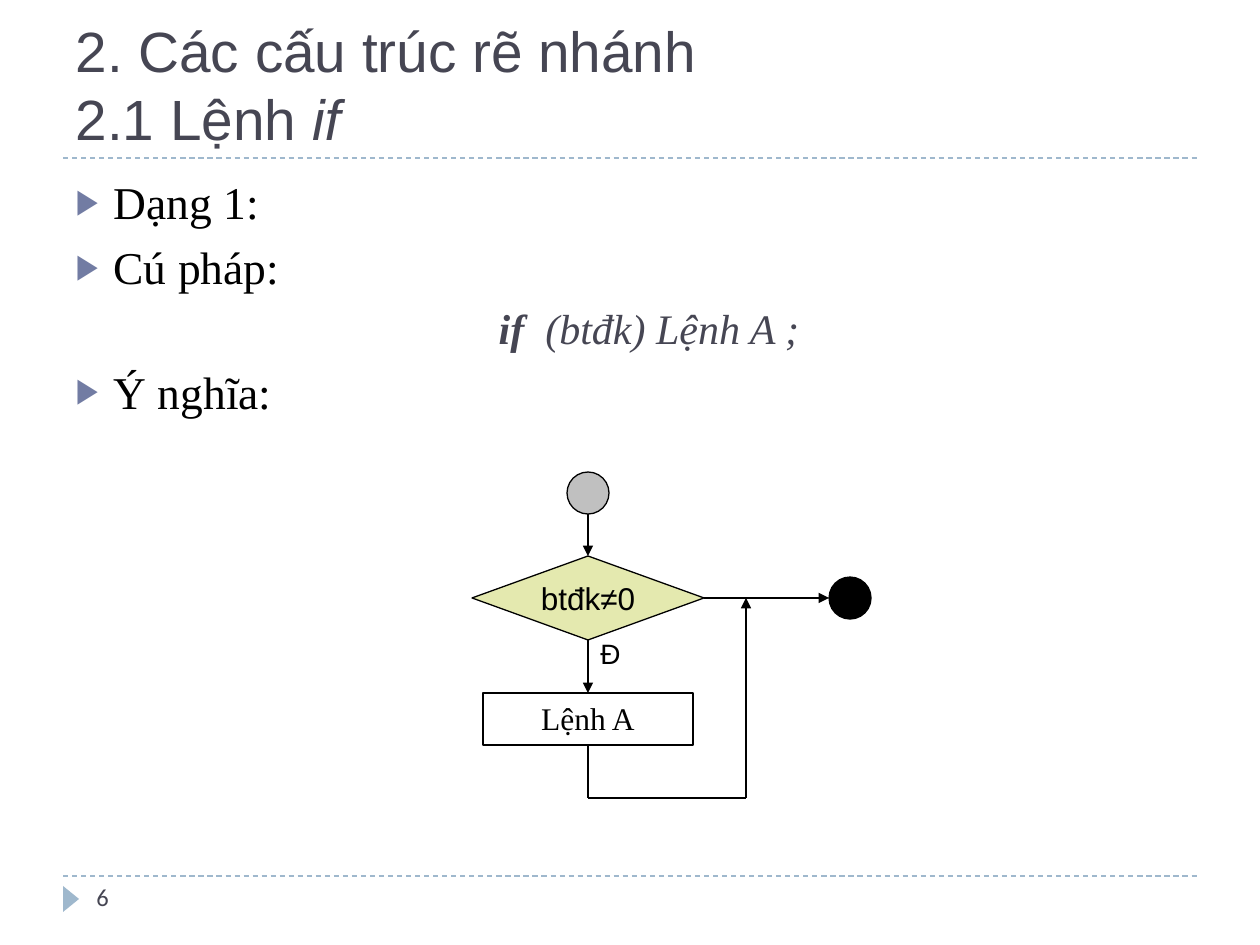
from dataclasses import dataclass, field
from typing import Any, Optional

import pptx
import pptx.dml.color
import pptx.enum.dml
import pptx.enum.shapes
import pptx.enum.text
import pptx.oxml
import pptx.oxml.ns
import pptx.util

EMU_PER_PX = 914400 / 126
COLORS = {
    "heading": "464653",
    "rule": "9FB8CD",
    "bullet": "727CA3",
    "ink": "000000",
    "start": "C0C0C0",
    "decision": "E4E9AF",
}
SHAPE = pptx.enum.shapes.MSO_SHAPE
ALIGN = pptx.enum.text.PP_ALIGN
ANCHOR = pptx.enum.text.MSO_ANCHOR
DASH = pptx.enum.dml.MSO_LINE.DASH
NO_FIT = pptx.enum.text.MSO_AUTO_SIZE.NONE
TOP, LEFT, BOTTOM, RIGHT = range(4)


@dataclass
class Style:
    font: str
    size: float
    color: str = "ink"
    extra: dict[str, bool] = field(default_factory=dict)


@dataclass
class Node:
    kind: Any
    box: tuple[int, int, int, int]
    fill: Optional[str] = None
    line: Optional[str] = "ink"
    text: str = ""
    style: Optional[Style] = None
    rotation: int = 0
    frame: dict[str, Any] = field(default_factory=dict)


@dataclass
class Link:
    start: tuple[int, int]
    end: tuple[int, int]
    arrow: bool = False
    begin: Optional[tuple[str, int]] = None
    finish: Optional[tuple[str, int]] = None
    color: str = "ink"
    dash: Any = None


HEADING = Style("Arial", 32.4, "heading")
HEADING_ITALIC = Style("Arial", 32.4, "heading", {"italic": True})
ITEM = Style("Times New Roman", 26)
KEYWORD = Style("Times New Roman", 24, "heading", {"bold": True, "italic": True})
SYNTAX = Style("Times New Roman", 24, "heading", {"bold": False, "italic": True})
STEP = Style("Times New Roman", 18)
CONDITION = Style("Arial", 18)
BRANCH = Style("Arial", 16)
PAGE = Style("Calibri", 14, "heading")

NODES = {
    "marker": Node(SHAPE.ISOSCELES_TRIANGLE, (58, 891, 26, 16), "rule", None, rotation=90),
    "action": Node(SHAPE.RECTANGLE, (483, 693, 210, 52), text="Lệnh A", style=STEP,
                   frame={"vertical_anchor": ANCHOR.TOP}),
    "start": Node(SHAPE.OVAL, (567, 472, 42, 42), "start"),
    "stop": Node(SHAPE.OVAL, (829, 577, 42, 42), "ink"),
    "decision": Node(SHAPE.FLOWCHART_DECISION, (472, 556, 232, 84), "decision",
                     text="btđk≠0", style=CONDITION,
                     frame={"vertical_anchor": ANCHOR.MIDDLE, "word_wrap": False}),
}
RULES = [Link((63, y), (1197, y), color="rule", dash=DASH) for y in (876, 158)]
FLOW = [
    Link((704, 598), (829, 598), True, begin=("decision", RIGHT)),
    Link((588, 514), (588, 556), True, finish=("decision", TOP)),
    Link((588, 640), (588, 693), True, ("decision", BOTTOM), ("action", TOP)),
    Link((588, 745), (588, 798), begin=("action", BOTTOM)),
    Link((588, 798), (746, 798)),
    Link((746, 798), (746, 598), True),
]
ITEMS = [
    [("Dạng 1:", ITEM)],
    [("Cú pháp:", ITEM)],
    [("if", KEYWORD), ("  (btđk) Lệnh A ;", SYNTAX)],
    [("Ý nghĩa:", ITEM)],
]


def px(value: int) -> pptx.util.Emu:
    return pptx.util.Emu(round(value * EMU_PER_PX))


def rgb(name: str) -> pptx.dml.color.RGBColor:
    return pptx.dml.color.RGBColor.from_string(COLORS[name])


def apply(target: Any, values: dict[str, Any]) -> None:
    for name, value in values.items():
        setattr(target, name, value)


def place(shape: Any, box: tuple[int, int, int, int]) -> None:
    apply(shape, dict(zip(("left", "top", "width", "height"), map(px, box))))


def add_run(paragraph: Any, text: str, style: Style) -> None:
    run = paragraph.add_run()
    run.text = text
    apply(run.font, {"name": style.font, "size": pptx.util.Pt(style.size), **style.extra})
    run.font.color.rgb = rgb(style.color)


def append_xml(parent: Any, tag: str, **attributes: str) -> Any:
    child = pptx.oxml.parse_xml(f'<a:{tag} {pptx.oxml.ns.nsdecls("a")}/>')
    for name, value in attributes.items():
        child.set(name, value)
    parent.append(child)
    return child


def add_node(slide: Any, node: Node) -> Any:
    shape = slide.shapes.add_shape(node.kind, *map(px, node.box))
    shape.shadow.inherit = False
    shape.rotation = node.rotation
    if node.fill:
        shape.fill.solid()
        shape.fill.fore_color.rgb = rgb(node.fill)
    else:
        shape.fill.background()
    if node.line:
        shape.line.color.rgb = rgb(node.line)
        shape.line.width = pptx.util.Pt(0.75)
    else:
        shape.line.fill.background()
    if node.style:
        apply(shape.text_frame, node.frame)
        paragraph = shape.text_frame.paragraphs[0]
        paragraph.alignment = ALIGN.CENTER
        add_run(paragraph, node.text, node.style)
    return shape


def add_link(slide: Any, link: Link, nodes: dict[str, Any]) -> None:
    connector = slide.shapes.add_connector(
        pptx.enum.shapes.MSO_CONNECTOR.STRAIGHT, *map(px, link.start + link.end))
    if link.begin:
        connector.begin_connect(nodes[link.begin[0]], link.begin[1])
    if link.finish:
        connector.end_connect(nodes[link.finish[0]], link.finish[1])
    connector.line.color.rgb = rgb(link.color)
    connector.line.width = pptx.util.Pt(0.75)
    if link.dash:
        connector.line.dash_style = link.dash
    if link.arrow:
        append_xml(connector.line._get_or_add_ln(), "tailEnd", type="triangle")
    append_xml(connector._element.spPr, "effectLst")


def add_label(slide: Any, box: tuple[int, int, int, int], text: str, style: Style, align: Any) -> None:
    label = slide.shapes.add_textbox(*map(px, box)).text_frame
    label.word_wrap = True
    label.paragraphs[0].alignment = align
    add_run(label.paragraphs[0], text, style)


def fill_title(title: Any) -> None:
    place(title, (63, 21, 1134, 137))
    apply(title.text_frame, {"vertical_anchor": ANCHOR.BOTTOM, "auto_size": NO_FIT})
    heading = title.text_frame.paragraphs[0]
    heading.alignment = ALIGN.LEFT
    add_run(heading, "2. Các cấu trúc rẽ nhánh", HEADING)
    heading.add_line_break()
    add_run(heading, "2.1 Lệnh ", HEADING)
    add_run(heading, "if", HEADING_ITALIC)


def fill_body(body: Any) -> None:
    place(body, (63, 168, 1134, 680))
    body.text_frame.auto_size = NO_FIT
    for index, parts in enumerate(ITEMS):
        item = body.text_frame.paragraphs[0] if index == 0 else body.text_frame.add_paragraph()
        nested = len(parts) > 1
        apply(item, {
            "level": int(nested),
            "alignment": ALIGN.CENTER if nested else ALIGN.LEFT,
            "space_before": pptx.util.Pt(5 if nested else 6),
        })
        properties = item._p.get_or_add_pPr()
        properties.set("marL", str(px(76 if nested else 38)))
        properties.set("indent", str(px(-38)))
        if nested:
            append_xml(properties, "buNone")
        else:
            append_xml(append_xml(properties, "buClr"), "srgbClr", val=COLORS["bullet"])
            append_xml(properties, "buSzPct", val="76000")
            append_xml(properties, "buFont", typeface="Arial")
            append_xml(properties, "buChar", char="▶")
        for text, style in parts:
            add_run(item, text, style)


def main() -> None:
    deck = pptx.Presentation()
    apply(deck, {"slide_width": px(1260), "slide_height": px(945)})
    slide = deck.slides.add_slide(deck.slide_layouts[1])
    fill_title(slide.shapes.title)
    fill_body(slide.placeholders[1])
    nodes = {name: add_node(slide, node) for name, node in NODES.items()}
    for link in RULES + FLOW:
        add_link(slide, link, nodes)
    add_label(slide, (84, 876, 273, 50), "6", PAGE, ALIGN.LEFT)
    add_label(slide, (588, 630, 42, 47), "Đ", BRANCH, ALIGN.CENTER)
    deck.save("out.pptx")


if __name__ == "__main__":
    main()
